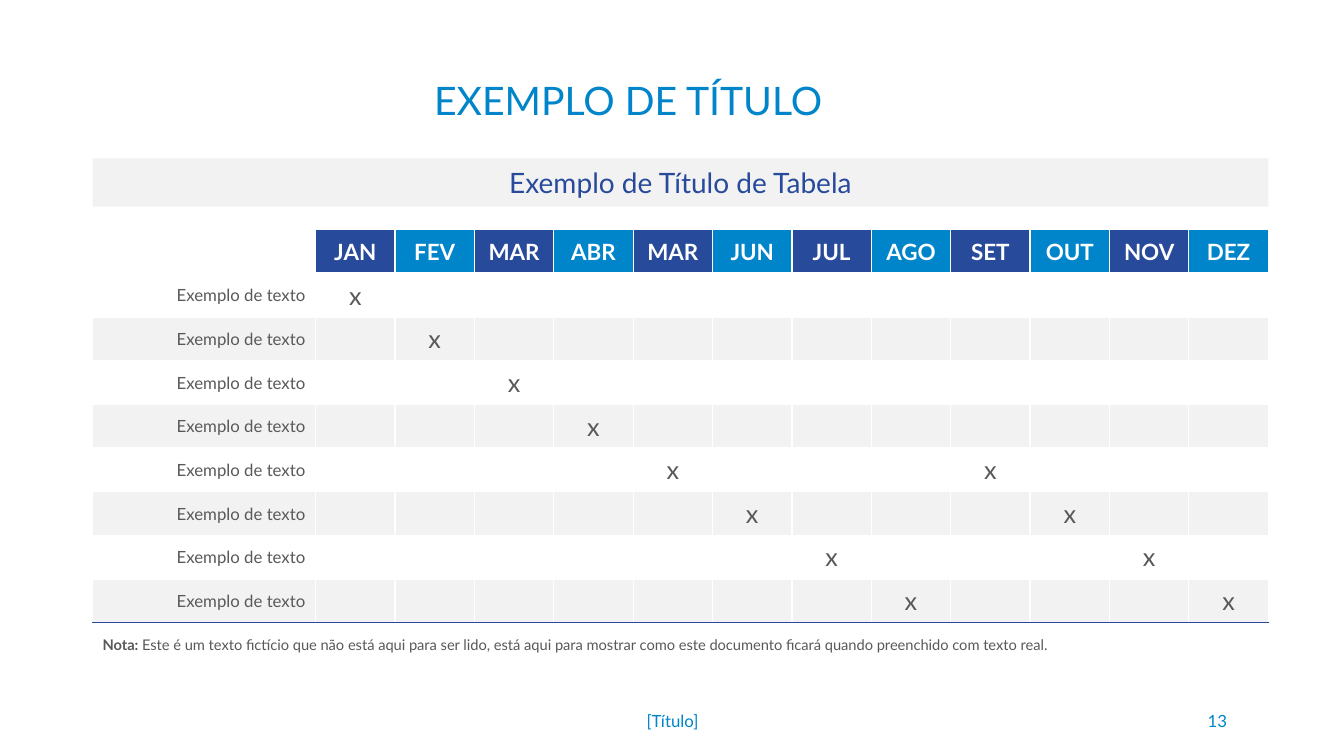
"""Builds a slide with a twelve-month schedule table."""
from lxml import etree
from pptx import Presentation
from pptx.dml.color import RGBColor
from pptx.enum.shapes import MSO_SHAPE
from pptx.enum.text import MSO_ANCHOR, PP_ALIGN
from pptx.oxml.ns import qn
from pptx.util import Inches, Pt

LEFT, CENTER, RIGHT = PP_ALIGN.LEFT, PP_ALIGN.CENTER, PP_ALIGN.RIGHT
TOP, MIDDLE = MSO_ANCHOR.TOP, MSO_ANCHOR.MIDDLE
RECTANGLE = MSO_SHAPE.RECTANGLE
COLORS = {"navy": "284A9B", "blue": "0085CA", "gray": "595959",
          "band": "F2F2F2", "white": "FFFFFF"}
MONTHS = ["JAN", "FEV", "MAR", "ABR", "MAR", "JUN",
          "JUL", "AGO", "SET", "OUT", "NOV", "DEZ"]
TASK_MONTHS = [[1], [2], [3], [4], [5, 9], [6, 10], [7, 11], [8, 12]]
TABLE_LEFT, TABLE_WIDTH, LABEL_WIDTH = 0.92, 11.66, 2.21


def add_run(paragraph, text, size, color, bold=False):
    run = paragraph.add_run()
    run.text = text
    run.font.name = "Lato"
    run.font.size = Pt(size)
    run.font.bold = bold
    run.font.color.rgb = RGBColor.from_string(COLORS[color])


def add_text(box, runs, align, anchor):
    frame = slide.shapes.add_textbox(*map(Inches, box)).text_frame
    frame.word_wrap = True
    frame.vertical_anchor = anchor
    paragraph = frame.paragraphs[0]
    paragraph.alignment = align
    for run in runs:
        add_run(paragraph, *run)
    return paragraph


prs = Presentation()
prs.slide_width, prs.slide_height = Inches(13.33), Inches(7.5)
slide = prs.slides.add_slide(prs.slide_layouts[6])

add_text((11.71, 6.95, 0.56, 0.4), [("13", 12, "blue")], RIGHT, MIDDLE)

rows = [[""] + MONTHS]
for marked in TASK_MONTHS:
    rows.append(["Exemplo de texto"] + ["x" if m in marked else "" for m in range(1, 13)])

schedule = slide.shapes.add_table(
    len(rows), len(rows[0]), Inches(TABLE_LEFT), Inches(2.28),
    Inches(TABLE_WIDTH), Inches(3.9)).table
schedule.first_row = schedule.horz_banding = False
for c, column in enumerate(schedule.columns):
    column.width = Inches((TABLE_WIDTH - LABEL_WIDTH) / len(MONTHS) if c else LABEL_WIDTH)

for r, row in enumerate(rows):
    for c, text in enumerate(row):
        cell = schedule.cell(r, c)
        cell.vertical_anchor = MIDDLE
        bottom = ("white", 3) if r == 0 else ("navy" if r == len(rows) - 1 else "white", 1)
        properties = cell._tc.get_or_add_tcPr()
        for side in "LRTB":
            color, width = bottom if side == "B" else ("white", 1)
            border = etree.SubElement(properties, qn(f"a:ln{side}"), w=str(Pt(width)))
            solid = etree.SubElement(border, qn("a:solidFill"))
            etree.SubElement(solid, qn("a:srgbClr"), val=COLORS[color])
        if r == 0 and c == 0:
            cell.fill.background()
        else:
            odd = ("navy", "white") if r == 0 else ("white", "gray")
            fill = ("navy" if c % 2 else "blue") if r == 0 else ("white" if r % 2 else "band")
            cell.fill.solid()
            cell.fill.fore_color.rgb = RGBColor.from_string(COLORS[fill])
        if text:
            paragraph = cell.text_frame.paragraphs[0]
            paragraph.alignment = CENTER if c else RIGHT
            size = 16 if r == 0 else 18 if c else 12
            add_run(paragraph, text, size, "gray" if r else "white", r == 0)

heading_band = slide.shapes.add_shape(
    RECTANGLE, Inches(TABLE_LEFT), Inches(1.57), Inches(TABLE_WIDTH), Inches(0.48))
heading_band.shadow.inherit = False
heading_band.fill.solid()
heading_band.fill.fore_color.rgb = RGBColor.from_string(COLORS["band"])
heading_band.line.fill.background()
add_text((TABLE_LEFT, 1.57, TABLE_WIDTH, 0.48),
         [("Exemplo de Título de Tabela", 20, "navy")], CENTER, MIDDLE)

add_text((1.06, 0.71, 10.34, 0.51), [("EXEMPLO DE TÍTULO", 28, "blue")], CENTER, TOP)
note = add_text((TABLE_LEFT, 6.28, 12.43, 0.25), [
    ("Nota: ", 10.5, "gray", True),
    ("Este é um texto fictício que não está aqui para ser lido, está aqui para mostrar "
     "como este documento ficará quando preenchido com texto real.", 10.5, "gray")], LEFT, TOP)
note.line_spacing = 0.9
add_text((2.16, 6.95, 9.02, 0.4), [("[Título]", 12, "blue")], CENTER, MIDDLE)

prs.save("out.pptx")
